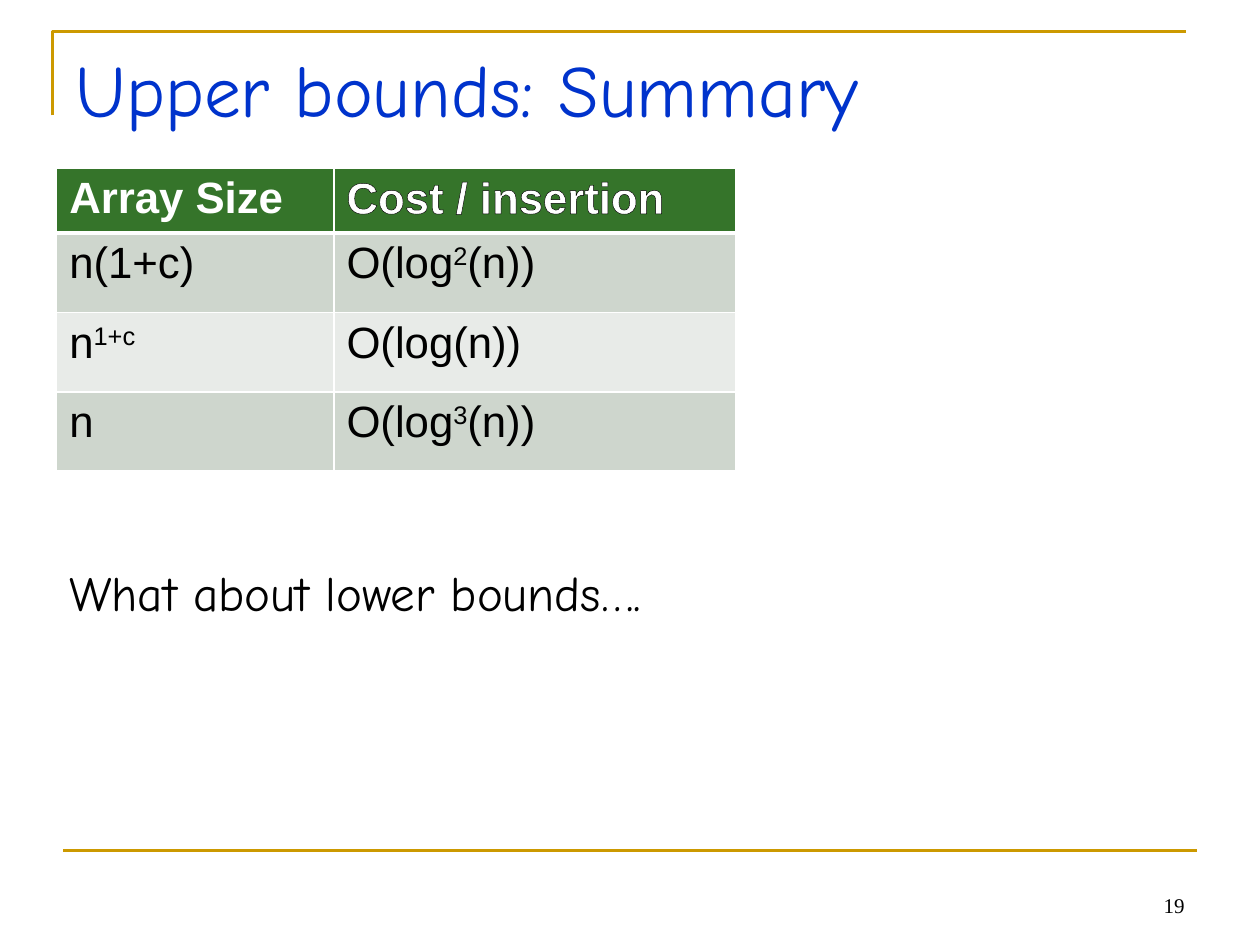
from lxml.etree import SubElement
from pptx import Presentation
from pptx.dml.color import RGBColor
from pptx.enum.shapes import MSO_CONNECTOR
from pptx.enum.text import MSO_ANCHOR, PP_ALIGN
from pptx.oxml.ns import qn
from pptx.util import Pt

GOLD = RGBColor(0xCC, 0x99, 0x00)
BLUE = RGBColor(0x00, 0x33, 0xCC)
GREEN = RGBColor(0x35, 0x74, 0x2A)
DARK = RGBColor(0xCE, 0xD6, 0xCD)
LIGHT = RGBColor(0xE8, 0xEB, 0xE8)
WHITE = RGBColor(0xFF, 0xFF, 0xFF)
BLACK = RGBColor(0x00, 0x00, 0x00)

# Each cell is a list of runs; a run starting with "^" is raised
HEAD = [["Array Size"], ["Cost / insertion"]]
BODY = [
    [["n(1+c)"], ["O(log", "^2", "(n))"]],
    [["n", "^1+c"], ["O(log(n))"]],
    [["n"], ["O(log", "^3", "(n))"]],
]


def add_run(para, text, font, size, color, bold=False):
    run = para.add_run()
    run.text = text
    run.font.name = font
    run.font.size = Pt(size)
    run.font.bold = bold
    run.font.color.rgb = color
    return run


def add_ink(parent, tag, width, color):
    line = SubElement(parent, qn(tag), w=str(Pt(width)))
    fill = SubElement(line, qn("a:solidFill"))
    SubElement(fill, qn("a:srgbClr"), val=str(color))
    return line


def add_label(slide, box, text, font, size, color,
              align=PP_ALIGN.LEFT, anchor=MSO_ANCHOR.TOP):
    frame = slide.shapes.add_textbox(*map(Pt, box)).text_frame
    frame.word_wrap = True
    frame.vertical_anchor = anchor
    para = frame.paragraphs[0]
    para.alignment = align
    add_run(para, text, font, size, color)


def add_frame(slide, left, top, width, height):
    # Corner rule around the title
    pen = slide.shapes.build_freeform(Pt(left), Pt(top + 48))
    pen.add_line_segments(
        [(Pt(left), Pt(top)), (Pt(left + width), Pt(top))], close=False)
    corner = pen.convert_to_shape()
    corner.shadow.inherit = False
    corner.fill.background()

    # Rule above the footer, shifted slightly to the right
    start, base = left + 6, top + height
    rule = slide.shapes.add_connector(
        MSO_CONNECTOR.STRAIGHT, Pt(start), Pt(base), Pt(start + width), Pt(base))
    SubElement(rule._element.spPr, qn("a:effectLst"))

    for shape in (corner, rule):
        shape.line.color.rgb = GOLD
        shape.line.width = Pt(1.5)


def fill_cell(cell, parts, fill, color, bold, base):
    para = cell.text_frame.paragraphs[0]
    for part in parts:
        run = add_run(para, part.lstrip("^"), "Arial", 25, color, bold)
        if part.startswith("^"):
            run.font._element.set("baseline", "30000")
    # Borders come before the fill
    props = cell._tc.get_or_add_tcPr()
    for side, width in zip("LRTB", (1, 1, 1, base)):
        add_ink(props, "a:ln" + side, width, WHITE)
    cell.fill.solid()
    cell.fill.fore_color.rgb = fill


def add_costs(slide, left, top, width, height):
    rows = [HEAD] + BODY
    table = slide.shapes.add_table(
        len(rows), 2, Pt(left), Pt(top), Pt(width), Pt(height)).table
    first, head = 158.4, 35
    table.columns[0].width = Pt(first)
    table.columns[1].width = Pt(width - first)
    for i, row in enumerate(rows):
        table.rows[i].height = Pt((height - head) / len(BODY) if i else head)
        fill = (DARK if i % 2 else LIGHT) if i else GREEN
        color = BLACK if i else WHITE
        for j, parts in enumerate(row):
            fill_cell(table.cell(i, j), parts, fill, color, i == 0, 1 if i else 3)
    # Outlined letters in the second heading
    run = table.cell(0, 1).text_frame.paragraphs[0].runs[0]
    props = run.font._element
    props.insert(0, add_ink(props, "a:ln", 0.75, BLACK))


def main():
    deck = Presentation()
    deck.slide_width, deck.slide_height = Pt(720), Pt(540)
    slide = deck.slides.add_slide(deck.slide_layouts[6])

    add_frame(slide, 30, 18, 648, 468)
    add_label(slide, (36, 21.6, 648, 90), "Upper bounds: Summary",
              "Comic Neue", 42, BLUE)
    add_costs(slide, 32.4, 96, 388, 171)
    add_label(slide, (32.4, 318.2, 669, 75), "What about lower bounds….",
              "Comic Neue", 28, BLACK)
    add_label(slide, (516, 492, 168, 36), "19", "Times New Roman", 12, BLACK,
              PP_ALIGN.RIGHT, MSO_ANCHOR.BOTTOM)

    deck.save("out.pptx")


if __name__ == "__main__":
    main()
